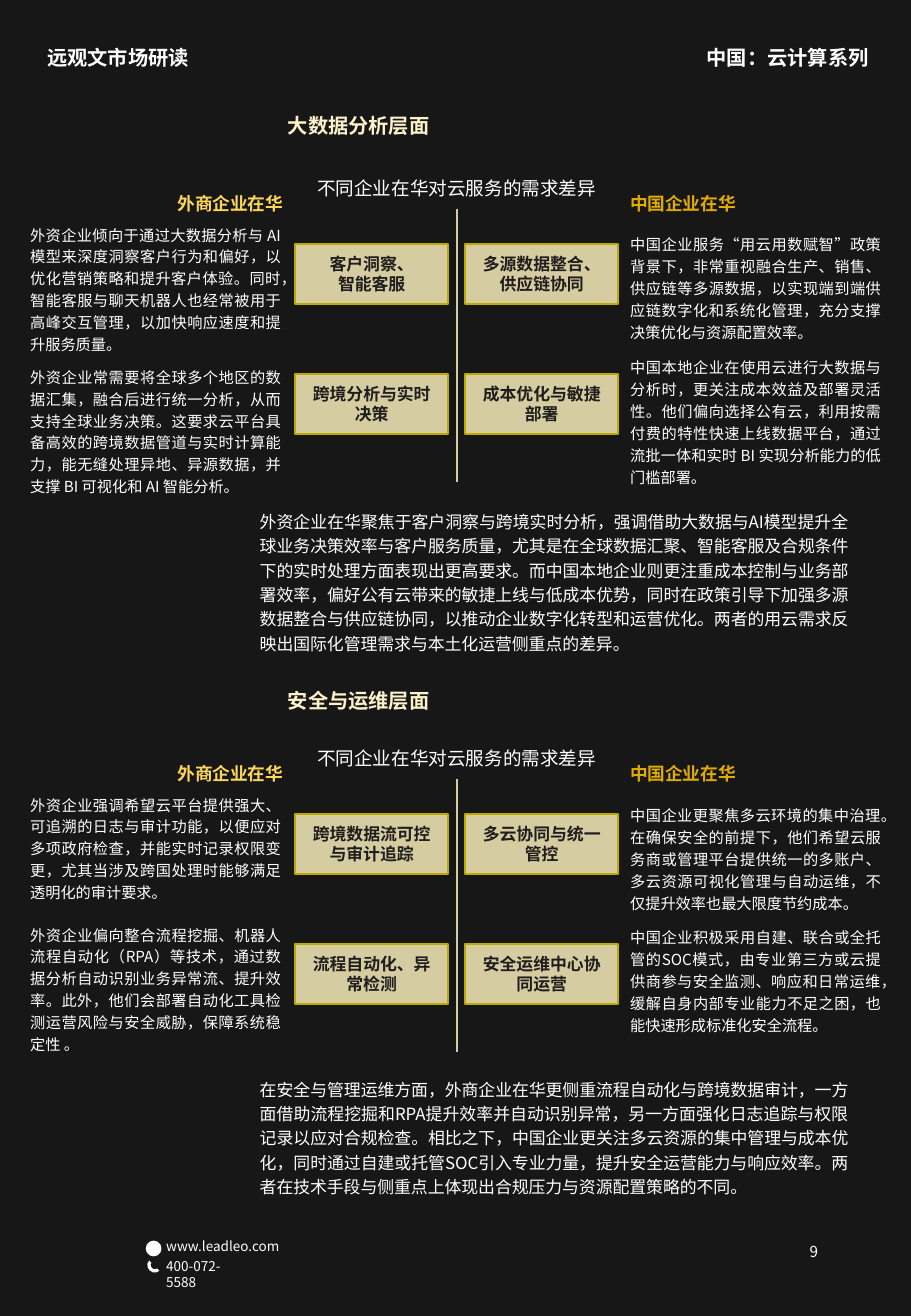
"""Build a dark report page comparing cloud needs on two levels."""
from pptx import Presentation
from pptx.dml.color import RGBColor
from pptx.enum.shapes import MSO_CONNECTOR, MSO_SHAPE
from pptx.enum.text import MSO_ANCHOR, MSO_AUTO_SIZE, PP_ALIGN
from pptx.oxml.ns import qn
from pptx.util import Inches, Pt

HEADERS = [
    ("远观文市场研读", 0.29, 1.4),
    ("中国：云计算系列", 5.72, 1.58),
]
CONTACTS = [
    ("www.leadleo.com", 10.14, 1.18),
    ("400-072-5588", 10.3, 0.8),
]
PAGE = "9"
CAPTION = "不同企业在华对云服务的需求差异"
SIDES = ("外商企业在华", "中国企业在华")
SECTIONS = [
    dict(
        head="大数据分析层面", head_top=0.77, top=1.37, sum_top=4.13,
        cards=[["客户洞察、\n智能客服", "跨境分析与实时决策"],
               ["多源数据整合、供应链协同", "成本优化与敏捷部署"]],
        notes=[
            [(1.78, "外资企业倾向于通过大数据分析与 AI 模型来深度洞察客户行为和偏好，以优化营销策略和提升客户体验。同时，智能客服与聊天机器人也经常被用于高峰交互管理，以加快响应速度和提升服务质量。"),
             (2.95, "外资企业常需要将全球多个地区的数据汇集，融合后进行统一分析，从而支持全球业务决策。这要求云平台具备高效的跨境数据管道与实时计算能力，能无缝处理异地、异源数据，并支撑 BI 可视化和 AI 智能分析。")],
            [(1.86, "中国企业服务“用云用数赋智”政策背景下，非常重视融合生产、销售、供应链等多源数据，以实现端到端供应链数字化和系统化管理，充分支撑决策优化与资源配置效率。"),
             (2.87, "中国本地企业在使用云进行大数据与分析时，更关注成本效益及部署灵活性。他们偏向选择公有云，利用按需付费的特性快速上线数据平台，通过流批一体和实时 BI 实现分析能力的低门槛部署。")],
        ],
        sum="外资企业在华聚焦于客户洞察与跨境实时分析，强调借助大数据与AI模型提升全球业务决策效率与客户服务质量，尤其是在全球数据汇聚、智能客服及合规条件下的实时处理方面表现出更高要求。而中国本地企业则更注重成本控制与业务部署效率，偏好公有云带来的敏捷上线与低成本优势，同时在政策引导下加强多源数据整合与供应链协同，以推动企业数字化转型和运营优化。两者的用云需求反映出国际化管理需求与本土化运营侧重点的差异。",
    ),
    dict(
        head="安全与运维层面", head_top=5.5, top=6.06, sum_top=8.8,
        cards=[["跨境数据流可控与审计追踪", "流程自动化、异常检测"],
               ["多云协同与统一管控", "安全运维中心协同运营"]],
        notes=[
            [(6.47, "外资企业强调希望云平台提供强大、可追溯的日志与审计功能，以便应对多项政府检查，并能实时记录权限变更，尤其当涉及跨国处理时能够满足透明化的审计要求。"),
             (7.54, "外资企业偏向整合流程挖掘、机器人流程自动化（RPA）等技术，通过数据分析自动识别业务异常流、提升效率。此外，他们会部署自动化工具检测运营风险与安全威胁，保障系统稳定性 。")],
            [(6.56, "中国企业更聚焦多云环境的集中治理。在确保安全的前提下，他们希望云服务商或管理平台提供统一的多账户、多云资源可视化管理与自动运维，不仅提升效率也最大限度节约成本。"),
             (7.56, "中国企业积极采用自建、联合或全托管的SOC模式，由专业第三方或云提供商参与安全监测、响应和日常运维，缓解自身内部专业能力不足之困，也能快速形成标准化安全流程。")],
        ],
        sum="在安全与管理运维方面，外商企业在华更侧重流程自动化与跨境数据审计，一方面借助流程挖掘和RPA提升效率并自动识别异常，另一方面强化日志追踪与权限记录以应对合规检查。相比之下，中国企业更关注多云资源的集中管理与成本优化，同时通过自建或托管SOC引入专业力量，提升安全运营能力与响应效率。两者在技术手段与侧重点上体现出合规压力与资源配置策略的不同。",
    ),
]

THEME = dict(
    font="Noto Sans CJK SC", back="171717", card="D5CCA1", edge="BCA900", white="FEFFFE",
    styles=dict(
        header=(12, "FEFFFE", True), head=(12, "FEF2CB", True),
        foreign=(10.5, "FCD65B", True), local=(10.5, "E0AC04", True),
        caption=(11, "FEFFFE", False), card=(10, "201D1D", True),
        note=(9, "FEFFFE", False), sum=(10, "FEFFFE", False),
        contact=(8, "FEFFFE", False), page=(9, "FEFFFE", False),
    ),
)
LEFT, RIGHT = PP_ALIGN.LEFT, PP_ALIGN.RIGHT
MID, FULL = PP_ALIGN.CENTER, PP_ALIGN.JUSTIFY
CARD_X, CARD_W, CARD_H = (2.43, 3.83), 1.26, 0.49
NOTE_X = (0.15, 5.09)


def tone(name):
    return RGBColor.from_string(name)


def apply(item, values):
    for key, value in values.items():
        setattr(item, key, value)


def place(shape, *box):
    apply(shape, dict(zip(("left", "top", "width", "height"), map(Inches, box))))


def write(shape, text, style, align=LEFT, gap=1.0, **frame):
    size, color, bold = THEME["styles"][style]
    apply(shape.text_frame, dict(word_wrap=True, text=text) | frame)
    for para in shape.text_frame.paragraphs:
        apply(para, dict(alignment=align, line_spacing=gap, space_before=Pt(0)))
        for run in para.runs:
            apply(run.font, dict(name=THEME["font"], size=Pt(size), bold=bold))
            run.font.color.rgb = tone(color)
            east = run.font._element.makeelement(qn("a:ea"), {"typeface": THEME["font"]})
            run.font._element.find(qn("a:latin")).addnext(east)


def label(slide, box, *args, **frame):
    shape = slide.shapes.add_textbox(*map(Inches, box))
    write(shape, *args, **frame)


def block(slide, kind, box, fill, edge=None):
    shape = slide.shapes.add_shape(kind, *map(Inches, box))
    shape.shadow.inherit = False
    shape.fill.solid()
    shape.fill.fore_color.rgb = tone(fill)
    if edge:
        shape.line.color.rgb = tone(edge)
        shape.line.width = Pt(1)
    else:
        shape.line.fill.background()
    return shape


def draw_head(slide, part, first):
    shape = slide.shapes.title if first else slide.shapes.add_textbox(0, 0, 0, 0)
    place(shape, 2.33, part["head_top"], 4.25, 0.55)
    pads = dict(margin_left=0.04, margin_right=0.04, margin_top=0.02, margin_bottom=0.02)
    write(shape, part["head"], "head", LEFT, 0.9, auto_size=MSO_AUTO_SIZE.NONE,
          vertical_anchor=MSO_ANCHOR.MIDDLE,
          **{key: Inches(pad) for key, pad in pads.items()})


def draw_part(slide, part):
    top = part["top"]
    label(slide, (2.2, top, 3.12, 0.31), CAPTION, "caption", MID, 1.2)
    label(slide, (1.11, top + 0.13, 1.32, 0.3), SIDES[0], "foreign", RIGHT, 1.2)
    label(slide, (5.09, top + 0.13, 1.51, 0.3), SIDES[1], "local", LEFT, 1.2)
    ends = (3.76, top + 0.35, 3.76, top + 2.6)
    axis = slide.shapes.add_connector(MSO_CONNECTOR.STRAIGHT, *map(Inches, ends))
    axis.line.color.rgb = tone(THEME["card"])
    axis.line.width = Pt(1)
    props = axis._element.spPr
    props.append(props.makeelement(qn("a:effectLst"), {}))
    for left, cards in zip(CARD_X, part["cards"]):
        for row, text in enumerate(cards):
            box = (left, top + 0.64 + row * 1.07, CARD_W, CARD_H)
            card = block(slide, MSO_SHAPE.RECTANGLE, box, THEME["card"], THEME["edge"])
            write(card, text, "card", MID, vertical_anchor=MSO_ANCHOR.MIDDLE)
    for left, notes in zip(NOTE_X, part["notes"]):
        for y, text in notes:
            label(slide, (left, y, 2.26, 1.18), text, "note", FULL, 1.2)
    label(slide, (2.04, part["sum_top"], 5.04, 1.3), part["sum"], "sum", FULL, 1.2)


def main():
    deck = Presentation()
    apply(deck, dict(slide_width=Inches(7.5), slide_height=Inches(10.83)))
    slide = deck.slides.add_slide(deck.slide_layouts[5])
    slide.background.fill.solid()
    slide.background.fill.fore_color.rgb = tone(THEME["back"])
    for text, left, width in HEADERS:
        label(slide, (left, 0.32, width, 0.3), text, "header", word_wrap=False)
    for num, part in enumerate(SECTIONS):
        draw_head(slide, part, num == 0)
        draw_part(slide, part)
    for text, top, width in CONTACTS:
        label(slide, (1.27, top, width, 0.24), text, "contact")
    block(slide, MSO_SHAPE.OVAL, (1.2, 10.21, 0.13, 0.13), THEME["white"])
    phone = block(slide, MSO_SHAPE.BLOCK_ARC, (1.21, 10.36, 0.12, 0.11), THEME["white"])
    phone.rotation = 225
    label(slide, (6.26, 10.14, 0.88, 0.32), PAGE, "page", MID,
          vertical_anchor=MSO_ANCHOR.MIDDLE)
    deck.save("out.pptx")


if __name__ == "__main__":
    main()
